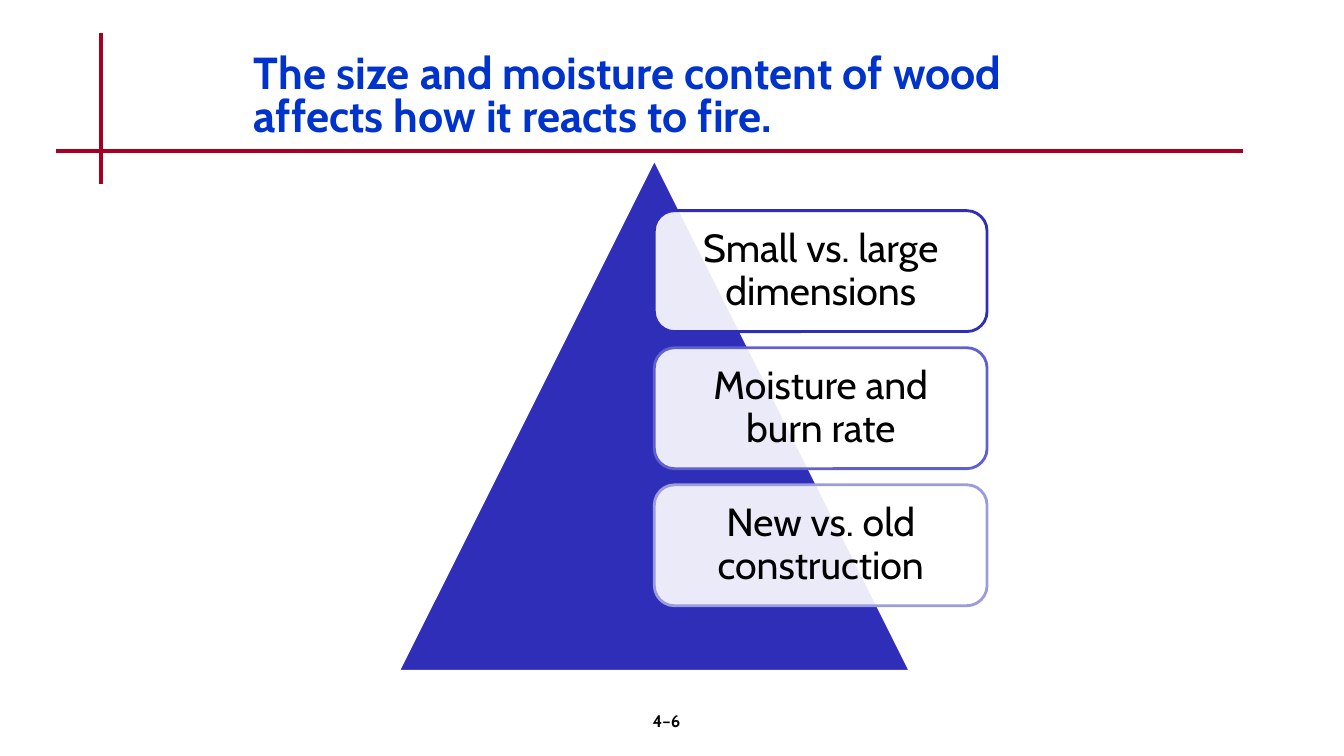
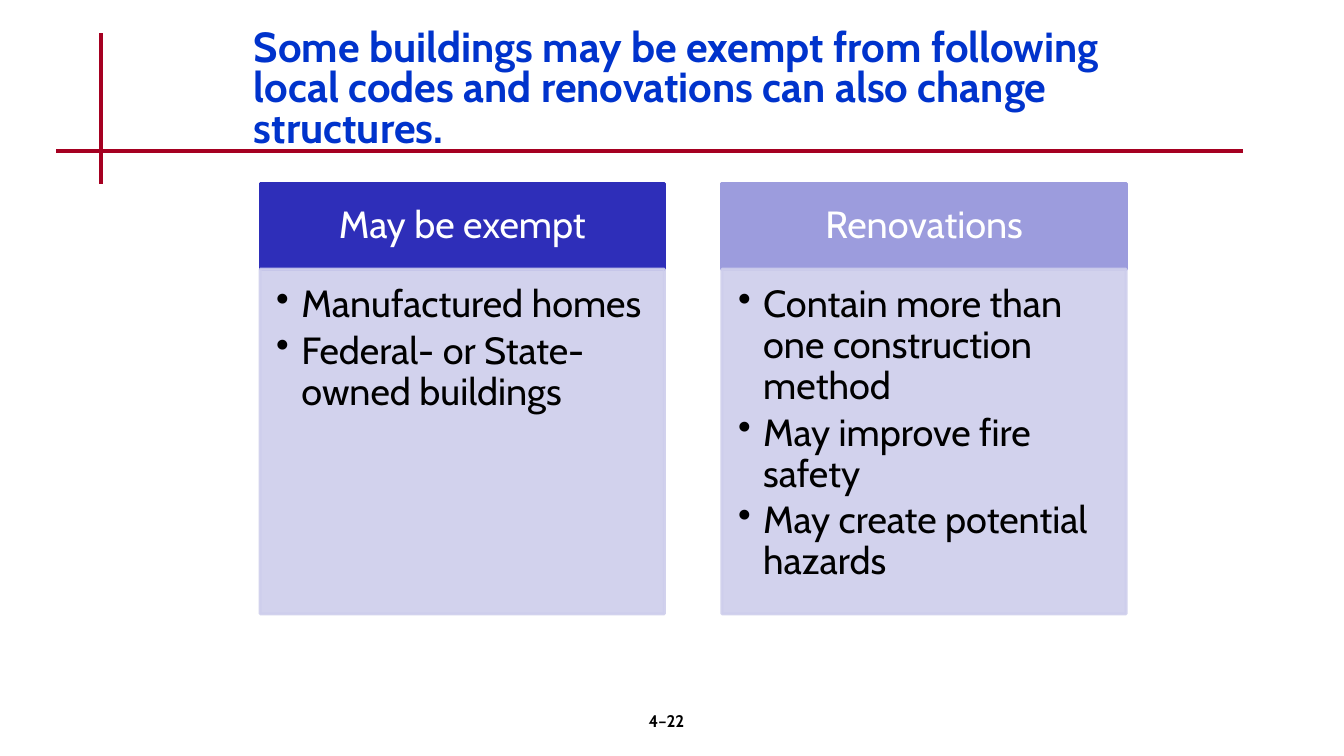
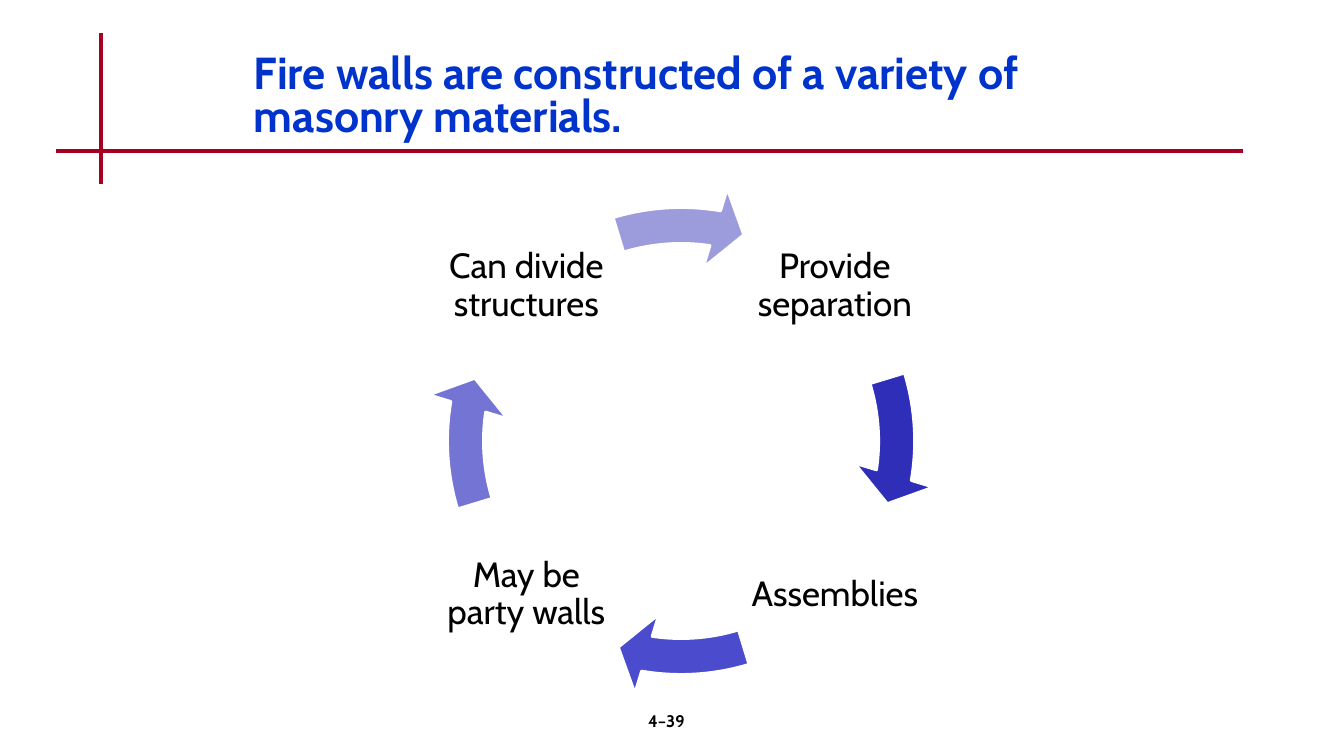
from dataclasses import dataclass

from lxml import etree
from pptx import Presentation
from pptx.dml.color import RGBColor
from pptx.enum.shapes import MSO_CONNECTOR, MSO_SHAPE
from pptx.enum.text import MSO_ANCHOR, PP_ALIGN
from pptx.oxml.ns import qn
from pptx.util import Inches, Pt

LEFT, CENTER = PP_ALIGN.LEFT, PP_ALIGN.CENTER
TOP, MIDDLE = MSO_ANCHOR.TOP, MSO_ANCHOR.MIDDLE
RECT, ROUND = MSO_SHAPE.RECTANGLE, MSO_SHAPE.ROUNDED_RECTANGLE
TRIANGLE, ARROW = MSO_SHAPE.ISOSCELES_TRIANGLE, MSO_SHAPE.CIRCULAR_ARROW
STRAIGHT = MSO_CONNECTOR.STRAIGHT

FONT = "Cabin"
COLORS = {
    "white": "FFFFFF",
    "black": "000000",
    "title": "0033CC",
    "rule": "A50021",
    "indigo": "2E2EB9",
    "blue": "4B4BCD",
    "violet": "6060D0",
    "periwinkle": "7474D4",
    "lavender": "9C9CDD",
    "pale": "CECEEC",
}

Box = tuple[float, float, float, float]


@dataclass
class TextStyle:
    size: float
    color: str = "black"
    bold: bool = False
    align: PP_ALIGN = CENTER
    anchor: MSO_ANCHOR = MIDDLE
    spacing: float = 0.9
    insets: Box = (0.1, 0.05, 0.1, 0.05)
    bullet: bool = False


@dataclass
class Card:
    text: str
    line: str


@dataclass
class Column:
    heading: str
    color: str
    items: list[str]


@dataclass
class Step:
    text: str
    left: float
    top: float
    color: str


NUMBER = TextStyle(12, bold=True, anchor=TOP, spacing=1.0)
CARD = TextStyle(28, insets=(0.12,) * 4)
HEADING = TextStyle(27, "white", insets=(0.21, 0.12, 0.21, 0.12))
BULLETS = TextStyle(27, align=LEFT, anchor=TOP,
                    insets=(0.16, 0.16, 0.21, 0.24), bullet=True)
STEP = TextStyle(25, insets=(0.03,) * 4)


def rgb(name: str) -> RGBColor:
    return RGBColor.from_string(COLORS[name])


def write(sp, lines: list[str], style: TextStyle) -> None:
    """Fill a shape or text box with one paragraph per line."""
    tf = sp.text_frame
    tf.word_wrap = True
    tf.vertical_anchor = style.anchor
    (tf.margin_left, tf.margin_top,
     tf.margin_right, tf.margin_bottom) = map(Inches, style.insets)
    for i, line in enumerate(lines):
        p = tf.add_paragraph() if i else tf.paragraphs[0]
        if style.bullet:
            pPr = p._p.get_or_add_pPr()
            pPr.set("marL", str(Inches(0.25)))
            pPr.set("indent", str(Inches(-0.25)))
            etree.SubElement(pPr, qn("a:buChar")).set("char", "•")
            p.space_after = Pt(4)
        p.alignment = style.align
        p.line_spacing = style.spacing
        r = p.add_run()
        r.text = line
        r.font.name = FONT
        r.font.size = Pt(style.size)
        r.font.bold = style.bold
        r.font.color.rgb = rgb(style.color)


def add_text(slide, box: Box, text: str, style: TextStyle) -> None:
    write(slide.shapes.add_textbox(*map(Inches, box)), [text], style)


def add_shape(slide, kind: MSO_SHAPE, box: Box, fill: str, line: str):
    sp = slide.shapes.add_shape(kind, *map(Inches, box))
    sp.shadow.inherit = False
    sp.fill.solid()
    sp.fill.fore_color.rgb = rgb(fill)
    sp.line.color.rgb = rgb(line)
    sp.line.width = Pt(2)
    return sp


def make_translucent(parent) -> None:
    """Set the solid fill directly below an XML element to 90 % opacity."""
    color = parent.find(qn("a:solidFill")).find(qn("a:srgbClr"))
    etree.SubElement(color, qn("a:alpha")).set("val", "90000")


def add_rule(slide, x1: float, y1: float, x2: float, y2: float) -> None:
    line = slide.shapes.add_connector(STRAIGHT, *map(Inches, (x1, y1, x2, y2)))
    line.line.color.rgb = rgb("rule")
    line.line.width = Pt(3)
    etree.SubElement(line._element.spPr, qn("a:effectLst"))


def add_slide(prs, title: str, number: str, top: float = 0.5,
              width: float = 8.5, size: float = 32):
    """Start a slide with the crossed rules, title and slide number."""
    slide = prs.slides.add_slide(prs.slide_layouts[6])
    add_rule(slide, 1, 0.33, 1, 1.83)
    add_rule(slide, 0.56, 1.5, 12.33, 1.5)
    style = TextStyle(size, "title", True, LEFT, TOP, 0.8)
    add_text(slide, (2.42, top, width, 1), title, style)
    add_text(slide, (5.22, 7, 2.78, 0.5), number, NUMBER)
    return slide


def add_pyramid(slide, cards: list[Card]) -> None:
    add_shape(slide, TRIANGLE, (3.95, 1.58, 5.08, 5.08), "indigo", "white")
    for i, card in enumerate(cards):
        box = (6.49, 2.09 + 1.36 * i, 3.3, 1.2)
        sp = add_shape(slide, ROUND, box, "white", card.line)
        make_translucent(sp._element.spPr)
        write(sp, [card.text], CARD)


def add_columns(slide, columns: list[Column]) -> None:
    for i, col in enumerate(columns):
        left = 2.58 + 4.58 * i
        head = add_shape(slide, RECT, (left, 1.82, 4.01, 0.85),
                         col.color, col.color)
        write(head, [col.heading], HEADING)
        body = add_shape(slide, RECT, (left, 2.67, 4.01, 3.42), "pale", "pale")
        spPr = body._element.spPr
        make_translucent(spPr)
        make_translucent(spPr.find(qn("a:ln")))
        write(body, col.items, BULLETS)


def add_cycle(slide, steps: list[Step]) -> None:
    # Angles are in 60000ths of a degree over 100000: a full turn is 216
    turn = 216
    for i, step in enumerate(steps):
        add_text(slide, (step.left, step.top, 1.8, 1.8), step.text, STEP)
        sp = add_shape(slide, ARROW, (4.21, 1.83, 5.09, 5.09),
                       step.color, "white")
        swing = turn / len(steps) * i
        values = (0.07, 4.66, 5.48 + swing, (205.86 + swing) % turn, 0.08)
        for k, value in enumerate(values):
            sp.adjustments[k] = value


def main() -> None:
    prs = Presentation()
    prs.slide_width, prs.slide_height = Inches(13.33), Inches(7.5)

    # Wood and fire
    slide = add_slide(
        prs, "The size and moisture content of wood affects how it reacts "
        "to fire.", "4–6")
    add_pyramid(slide, [
        Card("Small vs. large dimensions", "indigo"),
        Card("Moisture and burn rate", "violet"),
        Card("New vs. old construction", "lavender"),
    ])

    # Exemptions and renovations
    slide = add_slide(
        prs, "Some buildings may be exempt from following local codes and "
        "renovations can also change structures.", "4–22",
        top=0.25, width=8.83, size=30)
    add_columns(slide, [
        Column("May be exempt", "indigo", [
            "Manufactured homes",
            "Federal- or State- owned buildings",
        ]),
        Column("Renovations", "lavender", [
            "Contain more than one construction method",
            "May improve fire safety",
            "May create potential hazards",
        ]),
    ])

    # Fire walls
    slide = add_slide(
        prs, "Fire walls are constructed of a variety of masonry materials.",
        "4–39", width=8.42)
    left, right, upper, lower = 4.32, 7.38, 1.94, 5
    add_cycle(slide, [
        Step("Provide separation", right, upper, "indigo"),
        Step("Assemblies", right, lower, "blue"),
        Step("May be party walls", left, lower, "periwinkle"),
        Step("Can divide structures", left, upper, "lavender"),
    ])

    prs.save("out.pptx")


if __name__ == "__main__":
    main()
